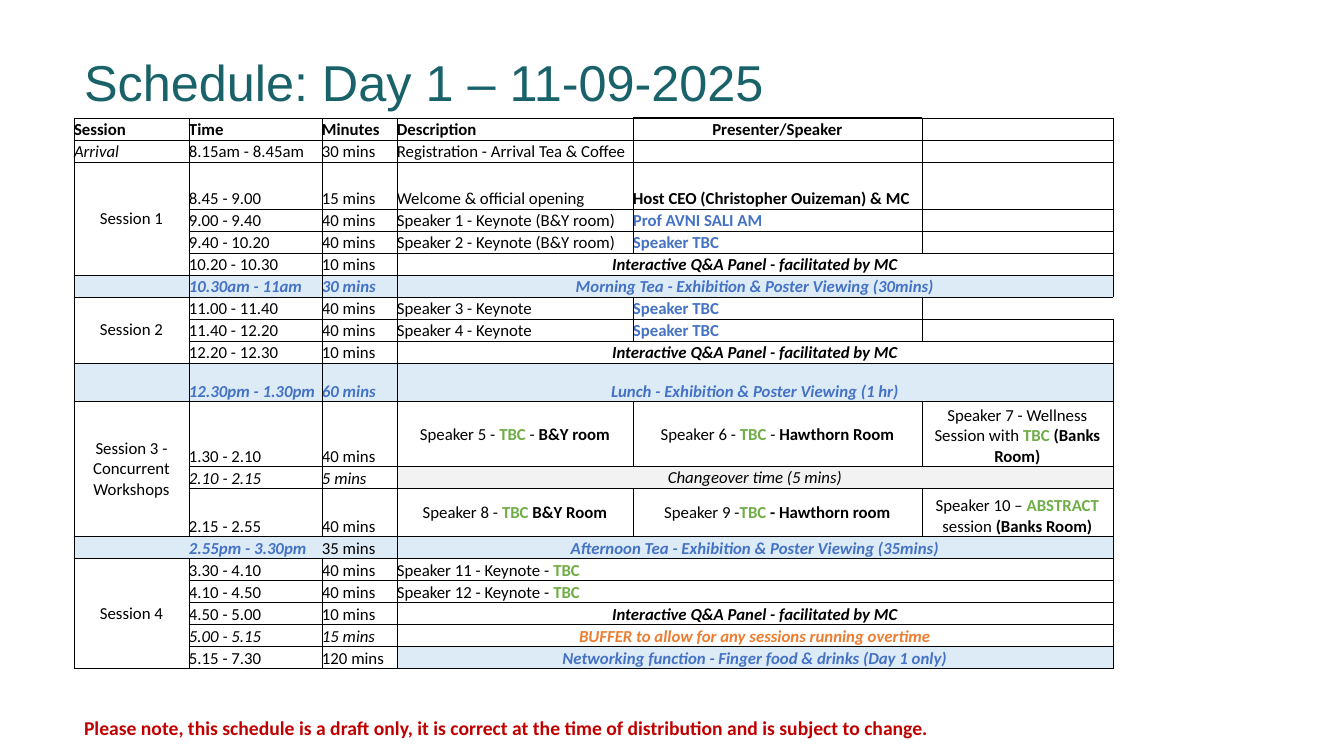
from lxml import etree
from pptx import Presentation
from pptx import util as u
from pptx.dml.color import RGBColor
from pptx.enum import text as t
from pptx.oxml.ns import qn

PX = 914400 / 100.8

theme = {
    "title": ("Arial", 36), "note": ("Calibri", 14), "cell": ("Calibri", 12),
    "white": "FFFFFF", "pale": "DDEBF7", "grey": "F2F2F2", "line": "000000",
    "plain": ("000000", False, False),
    "bold": ("000000", True, False),
    "slant": ("000000", False, True),
    "strong": ("000000", True, True),
    "blue": ("4472C4", True, False),
    "break": ("4472C4", True, True),
    "green": ("70AD47", True, False),
    "buffer": ("ED7D31", True, True),
    "teal": ("196269", False, False),
    "red": ("C00000", True, False),
}


def px(n):
    return u.Emu(round(n * PX))


def write(para, source, kind):
    face, size = theme[kind]
    for part in source.split("|"):
        style, mark, words = part.rpartition("~")
        color, bold, italic = theme[style or "plain"]
        run = para.add_run()
        run.text = words
        form = {"name": face, "size": u.Pt(size), "bold": bold, "italic": italic}
        for key, value in form.items():
            setattr(run.font, key, value)
        run.font.color.rgb = RGBColor.from_string(color)


deck = Presentation()
deck.slide_width, deck.slide_height = px(1344), px(756)
slide = deck.slides.add_slide(deck.slide_layouts[1])
title, note = slide.placeholders

heads = [
    (title, (74, 49, 1093, 57), 9, 0.9, "title", "teal~Schedule: Day 1 – 11-09-2025"),
    (note, (74, 711, 991, 41), 5, 1.0, "note",
     "red~Please note, this schedule is a draft only, it is correct at the time "
     "of distribution and is subject to change."),
]
for box, place, inset, lead, kind, words in heads:
    for key, value in zip(("left", "top", "width", "height"), place):
        setattr(box, key, px(value))
    frame = box.text_frame
    form = {"word_wrap": True, "auto_size": t.MSO_AUTO_SIZE.NONE,
            "vertical_anchor": t.MSO_ANCHOR.TOP, "margin_top": px(inset),
            "margin_bottom": 0, "margin_left": px(10), "margin_right": px(10)}
    for key, value in form.items():
        setattr(frame, key, value)
    para = frame.paragraphs[0]
    props = para._p.get_or_add_pPr()
    props.set("marL", "0")
    props.set("indent", "0")
    etree.SubElement(props, qn("a:buNone"))
    form = {"alignment": t.PP_ALIGN.LEFT, "line_spacing": lead, "space_before": u.Pt(0)}
    for key, value in form.items():
        setattr(para, key, value)
    write(para, words, kind)

panel = "^strong~Interactive Q&A Panel - facilitated by MC"
rows = [
    ("bold~Session", "bold~Time", "bold~Minutes", "bold~Description",
     "^bold~Presenter/Speaker", ""),
    ("slant~Arrival", "8.15am - 8.45am", "30 mins",
     "Registration - Arrival Tea & Coffee", "", ""),
    ("=Session 1", "8.45 - 9.00", "15 mins", "Welcome & official opening",
     "bold~Host CEO (Christopher Ouizeman) & MC", ""),
    (None, "9.00 - 9.40", "40 mins", "Speaker 1 - Keynote (B&Y room)",
     "blue~Prof AVNI SALI AM", ""),
    (None, "9.40 - 10.20", "40 mins", "Speaker 2 - Keynote (B&Y room)",
     "blue~Speaker TBC", ""),
    (None, "10.20 - 10.30", "10 mins", panel),
    ("", "break~10.30am - 11am", "break~30 mins",
     "^break~Morning Tea - Exhibition & Poster Viewing (30mins)"),
    ("=Session 2", "11.00 - 11.40", "40 mins", "Speaker 3 - Keynote",
     "blue~Speaker TBC", ""),
    (None, "11.40 - 12.20", "40 mins", "Speaker 4 - Keynote", "blue~Speaker TBC", ""),
    (None, "12.20 - 12.30", "10 mins", panel),
    ("", "break~12.30pm - 1.30pm", "break~60 mins",
     "^break~Lunch - Exhibition & Poster Viewing (1 hr)"),
    ("=Session 3 - Concurrent Workshops", "1.30 - 2.10", "40 mins",
     "=Speaker 5 - |green~TBC |- |bold~B&Y room",
     "=Speaker 6 - |green~TBC |- |bold~Hawthorn Room",
     "^Speaker 7 - Wellness Session with|green~ TBC |bold~(Banks Room)"),
    (None, "slant~2.10 - 2.15", "slant~5 mins", "=slant~Changeover time (5 mins)"),
    (None, "2.15 - 2.55", "40 mins", "=Speaker 8 - |green~TBC |bold~B&Y Room",
     "=Speaker 9 -|green~TBC |bold~- Hawthorn room",
     "^Speaker 10 – |green~ABSTRACT |session |bold~(Banks Room)"),
    ("", "break~2.55pm - 3.30pm", "35 mins",
     "^break~Afternoon Tea - Exhibition & Poster Viewing (35mins)"),
    ("=Session 4", "3.30 - 4.10", "40 mins", "Speaker 11 - Keynote - |green~TBC"),
    (None, "4.10 - 4.50", "40 mins", "Speaker 12 - Keynote - |green~TBC"),
    (None, "4.50 - 5.00", "10 mins", panel),
    (None, "slant~5.00 - 5.15", "slant~15 mins",
     "^buffer~BUFFER to allow for any sessions running overtime"),
    (None, "5.15 - 7.30", "120 mins",
     "^break~Networking function - Finger food & drinks (Day 1 only)"),
]
widths = [115, 133, 75, 236, 289, 191]
tall = {2: 47, 10: 39, 11: 65, 13: 48}
spans = {2: 4, 7: 3, 11: 3, 15: 5}
tints = {12: "grey", 19: "pale"}
bare = {(7, 5): "R", (14, 0): "R", (14, 1): "LR", (14, 2): "L"}
thick = {(0, 4): "T", (11, 4): "T"}

heights = [tall.get(r, 22) for r in range(len(rows))]
grid = slide.shapes.add_table(len(rows), len(widths), px(74), px(118),
                              px(sum(widths)), px(sum(heights))).table
grid.first_row = grid.horz_banding = False
for col, width in zip(grid.columns, widths):
    col.width = px(width)

for r, row in enumerate(rows):
    grid.rows[r].height = px(heights[r])
    for c in range(len(widths)):
        cell = grid.cell(r, c)
        source = (row[c] if c < len(row) else "") or ""
        centre = source[:1] in ("^", "=")
        middle = source[:1] == "="
        form = {"margin_left": 0, "margin_right": 0, "margin_top": 0, "margin_bottom": 0,
                "vertical_anchor": t.MSO_ANCHOR.MIDDLE if middle else t.MSO_ANCHOR.BOTTOM}
        for key, value in form.items():
            setattr(cell, key, value)
        props = cell._tc.get_or_add_tcPr()
        for side in "LRTB":
            wide = 1 if side in thick.get((r, c), "") else 0.5
            edge = etree.SubElement(props, qn("a:ln" + side), w=str(u.Pt(wide)))
            if side in bare.get((r, c), ""):
                etree.SubElement(edge, qn("a:noFill"))
            else:
                paint = etree.SubElement(edge, qn("a:solidFill"))
                etree.SubElement(paint, qn("a:srgbClr"), val=theme["line"])
        tint = "pale" if row[0] == "" else tints.get(r, "white") if c > 2 else "white"
        cell.fill.solid()
        cell.fill.fore_color.rgb = RGBColor.from_string(theme[tint])
        para = cell.text_frame.paragraphs[0]
        para.alignment = t.PP_ALIGN.CENTER if centre else t.PP_ALIGN.LEFT
        if source:
            write(para, source.lstrip("^="), "cell")
        else:
            etree.SubElement(para._p, qn("a:endParaRPr"), sz=str(theme["cell"][1] * 100))
    if len(row) == 4:
        grid.cell(r, 3).merge(grid.cell(r, 5))

for r, count in spans.items():
    grid.cell(r, 0).merge(grid.cell(r + count - 1, 0))

deck.save("out.pptx")
